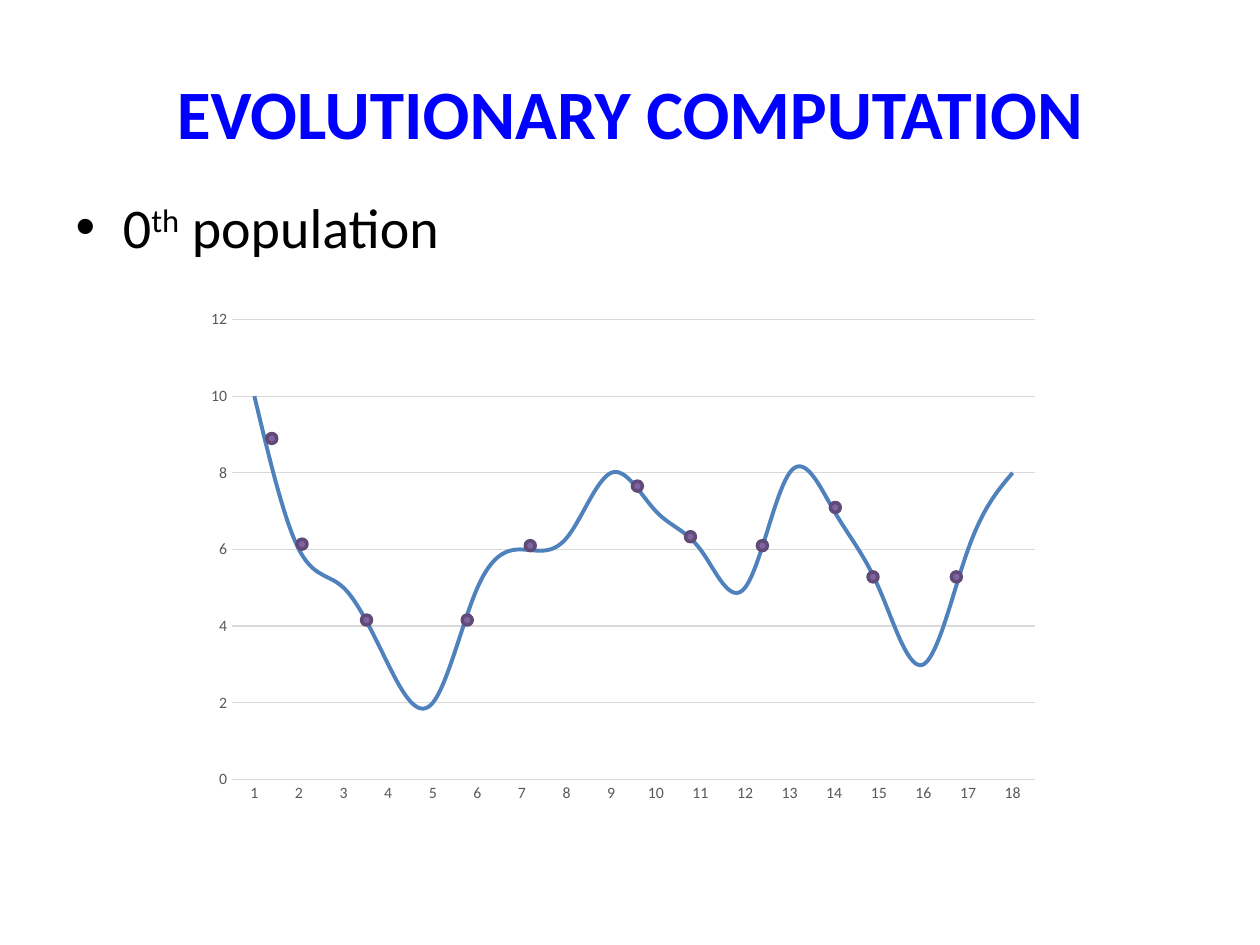
from dataclasses import dataclass
from typing import NamedTuple

from pptx import Presentation
from pptx.chart.data import CategoryChartData as ChartData
from pptx.dml.color import RGBColor
from pptx.enum.chart import XL_CHART_TYPE as ChartType, XL_MARKER_STYLE as Marker, XL_TICK_MARK as Tick
from pptx.enum.shapes import MSO_SHAPE as ShapeKind
from pptx.enum.text import MSO_ANCHOR as Anchor, MSO_AUTO_SIZE as AutoSize, PP_ALIGN as Align
from pptx.util import Cm, Pt


@dataclass(frozen=True)
class Theme:
    font: str = "Calibri"
    title: RGBColor = RGBColor(0x00, 0x00, 0xFF)
    text: RGBColor = RGBColor(0x00, 0x00, 0x00)
    label: RGBColor = RGBColor(0x59, 0x59, 0x59)
    grid: RGBColor = RGBColor(0xD9, 0xD9, 0xD9)
    curve: RGBColor = RGBColor(0x4F, 0x81, 0xBD)
    individual_fill: RGBColor = RGBColor(0x80, 0x64, 0xA2)
    individual_line: RGBColor = RGBColor(0x5F, 0x4A, 0x78)
    title_size: float = 39.6
    body_size: float = 32
    label_size: float = 9
    grid_width: float = 0.75
    curve_width: float = 2.25
    individual_width: float = 2


class Box(NamedTuple):
    left: float
    top: float
    width: float
    height: float


class Individual(NamedTuple):
    left: float
    top: float


THEME = Theme()
TITLE_BOX = Box(1.27, 1.27, 22.86, 1.98)
BODY_BOX = Box(1.27, 3.76, 22.86, 14.35)
CHART_BOX = Box(3.91, 6.05, 17.3, 10.34)
INDIVIDUAL_SIZE = 0.2
FITNESS = (10, 6, 5, 3, 2, 5, 6, 6.3, 8, 7, 6, 5, 8, 7, 5, 3, 6, 8)
POPULATION = (
    Individual(5.38, 8.74),
    Individual(5.99, 10.87),
    Individual(7.29, 12.4),
    Individual(9.32, 12.4),
    Individual(10.59, 10.9),
    Individual(12.75, 9.7),
    Individual(13.82, 10.72),
    Individual(15.27, 10.9),
    Individual(16.74, 10.13),
    Individual(17.5, 11.53),
    Individual(19.18, 11.53),
)


def lengths(box: Box) -> list:
    return [Cm(value) for value in box]


def place(shape, box: Box) -> None:
    shape.left, shape.top, shape.width, shape.height = lengths(box)
    shape.text_frame.auto_size = AutoSize.NONE


def format_font(font, *, size: float, color: RGBColor, bold: bool = False) -> None:
    font.name = THEME.font
    font.size = Pt(size)
    font.bold = bold
    font.color.rgb = color


def add_text(paragraph, text: str, *, size: float, color: RGBColor,
             bold: bool = False, baseline: int = 0) -> None:
    run = paragraph.add_run()
    run.text = text
    format_font(run.font, size=size, color=color, bold=bold)
    if baseline:
        run._r.get_or_add_rPr().set("baseline", str(baseline * 1000))


def format_line(line, color: RGBColor, width: float) -> None:
    line.color.rgb = color
    line.width = Pt(width)


def add_fitness_chart(slide) -> None:
    data = ChartData()
    data.categories = [str(number) for number in range(1, len(FITNESS) + 1)]
    data.add_series("Series 1", FITNESS)
    chart = slide.shapes.add_chart(ChartType.LINE, *lengths(CHART_BOX), data).chart
    chart.has_title = False
    chart.has_legend = False
    format_font(chart.font, size=10, color=THEME.text)
    for axis in (chart.category_axis, chart.value_axis):
        axis.major_tick_mark = axis.minor_tick_mark = Tick.NONE
        format_font(axis.tick_labels.font, size=THEME.label_size, color=THEME.label)
    format_line(chart.category_axis.format.line, THEME.grid, THEME.grid_width)
    value_axis = chart.value_axis
    value_axis.minimum_scale, value_axis.maximum_scale, value_axis.major_unit = 0, 12, 2
    value_axis.format.line.fill.background()
    value_axis.has_major_gridlines = True
    format_line(value_axis.major_gridlines.format.line, THEME.grid, THEME.grid_width)
    plot = chart.plots[0]
    plot.vary_by_categories = False
    series = plot.series[0]
    series.smooth = True
    series.marker.style = Marker.NONE
    format_line(series.format.line, THEME.curve, THEME.curve_width)


def add_individual(slide, individual: Individual) -> None:
    box = Box(*individual, INDIVIDUAL_SIZE, INDIVIDUAL_SIZE)
    dot = slide.shapes.add_shape(ShapeKind.OVAL, *lengths(box))
    dot.shadow.inherit = False
    dot.fill.solid()
    dot.fill.fore_color.rgb = THEME.individual_fill
    format_line(dot.line, THEME.individual_line, THEME.individual_width)


def main() -> None:
    presentation = Presentation()
    presentation.slide_width, presentation.slide_height = Cm(25.4), Cm(19.05)
    slide = presentation.slides.add_slide(presentation.slide_layouts[1])

    title = slide.shapes.title
    place(title, TITLE_BOX)
    title.text_frame.vertical_anchor = Anchor.MIDDLE
    heading = title.text_frame.paragraphs[0]
    heading.alignment = Align.CENTER
    add_text(heading, "EVOLUTIONARY COMPUTATION", size=THEME.title_size, color=THEME.title, bold=True)

    body = slide.placeholders[1]
    place(body, BODY_BOX)
    bullet = body.text_frame.paragraphs[0]
    for text, baseline in (("0", 0), ("th", 30), (" population", 0)):
        add_text(bullet, text, size=THEME.body_size, color=THEME.text, baseline=baseline)

    add_fitness_chart(slide)
    for individual in POPULATION:
        add_individual(slide, individual)

    presentation.save("out.pptx")


if __name__ == "__main__":
    main()
